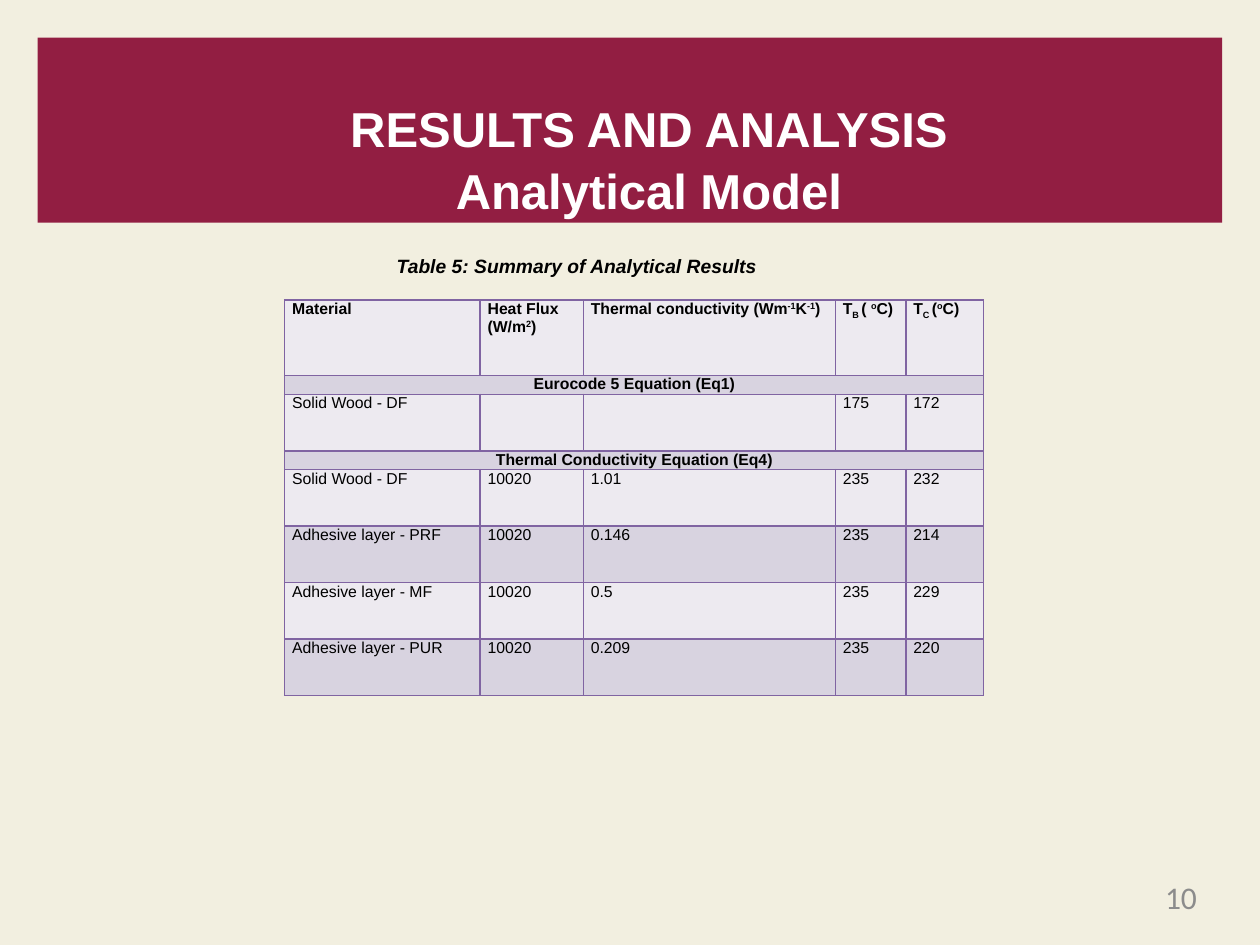
from lxml.etree import SubElement
from pptx import Presentation
from pptx.dml.color import RGBColor
from pptx.enum.text import MSO_ANCHOR, MSO_AUTO_SIZE, PP_ALIGN
from pptx.oxml.ns import qn
from pptx.util import Cm, Pt

CREAM = RGBColor(0xF2, 0xEF, 0xE0)
MAROON = RGBColor(0x92, 0x1E, 0x42)
WHITE = RGBColor(0xFF, 0xFF, 0xFF)
BLACK = RGBColor(0, 0, 0)
GRAY = RGBColor(0x8C, 0x8C, 0x8C)
LIGHT = RGBColor(0xED, 0xEA, 0xF0)
LILAC = RGBColor(0xD8, 0xD3, 0xE0)
PURPLE = RGBColor(0x80, 0x64, 0xA2)
SUPER, SUB = 30, -25


def style(paragraph, name, size, color, bold=False, align=PP_ALIGN.LEFT):
    paragraph.alignment = align
    font = paragraph.font
    font.name, font.size, font.bold = name, Pt(size), bold
    font.color.rgb = color


def add_borders(cell):
    properties = cell._tc.get_or_add_tcPr()
    for side in ("a:lnL", "a:lnR", "a:lnT", "a:lnB"):
        line = SubElement(properties, qn(side), w=str(Pt(1)))
        fill = SubElement(line, qn("a:solidFill"))
        SubElement(fill, qn("a:srgbClr"), val=str(PURPLE))


deck = Presentation()
deck.slide_width, deck.slide_height = Cm(25.4), Cm(19.05)
page = deck.slides.add_slide(deck.slide_layouts[5])
page.background.fill.solid()
page.background.fill.fore_color.rgb = CREAM

title = page.shapes.title
title.left, title.top, title.width, title.height = Cm(0.76), Cm(0.76), Cm(23.88), Cm(3.73)
title.fill.solid()
title.fill.fore_color.rgb = MAROON
frame = title.text_frame
frame.auto_size = MSO_AUTO_SIZE.NONE
frame.vertical_anchor = MSO_ANCHOR.TOP
frame.margin_left, frame.margin_top = Cm(0.76), Cm(1.17)
frame.margin_right = frame.margin_bottom = 0
frame.text = "RESULTS AND ANALYSIS\vAnalytical Model"
frame.paragraphs[0].line_spacing = 1.05
style(frame.paragraphs[0], "Arial", 28, WHITE, True, PP_ALIGN.CENTER)

header = [
    [("Material", 0)],
    [("Heat Flux (W/m", 0), ("2", SUPER), (")", 0)],
    [("Thermal conductivity (Wm", 0), ("-1", SUPER), ("K", 0), ("-1", SUPER), (")", 0)],
    [("T", 0), ("B ", SUB), ("( ", 0), ("o", SUPER), ("C)", 0)],
    [("T", 0), ("C ", SUB), ("(", 0), ("o", SUPER), ("C)", 0)],
]
rows = [
    header,
    ["Eurocode 5 Equation (Eq1)"],
    ["Solid Wood - DF", "", "", "175", "172"],
    ["Thermal Conductivity Equation (Eq4)"],
    ["Solid Wood - DF", "10020", "1.01", "235", "232"],
    ["Adhesive layer - PRF", "10020", "0.146", "235", "214"],
    ["Adhesive layer - MF", "10020", "0.5", "235", "229"],
    ["Adhesive layer - PUR", "10020", "0.209", "235", "220"],
]
widths = [3.94, 2.08, 5.08, 1.42, 1.57]
table = page.shapes.add_table(
    len(rows), len(widths), Cm(5.74), Cm(6.05), Cm(14.09), Cm(8)
).table
table.first_row = table.horz_banding = False
for column, width in zip(table.columns, widths):
    column.width = Cm(width)

for index, values in enumerate(rows):
    is_section = len(values) == 1
    is_header = index == 0
    table.rows[index].height = Cm(1.52 if is_header else 0.38 if is_section else 1.14)
    if is_section:
        table.cell(index, 0).merge(table.cell(index, len(widths) - 1))
    for position in range(len(widths)):
        cell = table.cell(index, position)
        add_borders(cell)
        cell.fill.solid()
        cell.fill.fore_color.rgb = LILAC if index % 2 else LIGHT
        cell.margin_left = cell.margin_right = Cm(0.15)
        cell.margin_top = cell.margin_bottom = 0
        para = cell.text_frame.paragraphs[0]
        align = PP_ALIGN.CENTER if is_section else PP_ALIGN.LEFT
        style(para, "Arial", 9, BLACK, is_header or is_section, align)
        if position >= len(values):
            continue
        pieces = values[position] if is_header else [(values[position], 0)]
        for text, baseline in pieces:
            if text:
                span = para.add_run()
                span.text = text
                if baseline:
                    span.font._element.set("baseline", str(baseline * 1000))

caption = page.shapes.add_textbox(Cm(5.28), Cm(4.88), Cm(12.7), Cm(0.79))
caption.text_frame.word_wrap = True
para = caption.text_frame.paragraphs[0]
para.text = "Table 5: Summary of Analytical Results"
para.line_spacing = 1.25
para.space_after = Pt(10)
style(para, "Arial", 11, BLACK, True, PP_ALIGN.CENTER)
para.font.italic = True

number = page.shapes.add_textbox(Cm(18.29), Cm(17.7), Cm(5.84), Cm(0.97))
frame = number.text_frame
frame.word_wrap = True
frame.margin_left = frame.margin_top = frame.margin_right = frame.margin_bottom = 0
frame.text = "10"
style(frame.paragraphs[0], "Calibri", 18, GRAY, align=PP_ALIGN.RIGHT)

deck.save("out.pptx")
